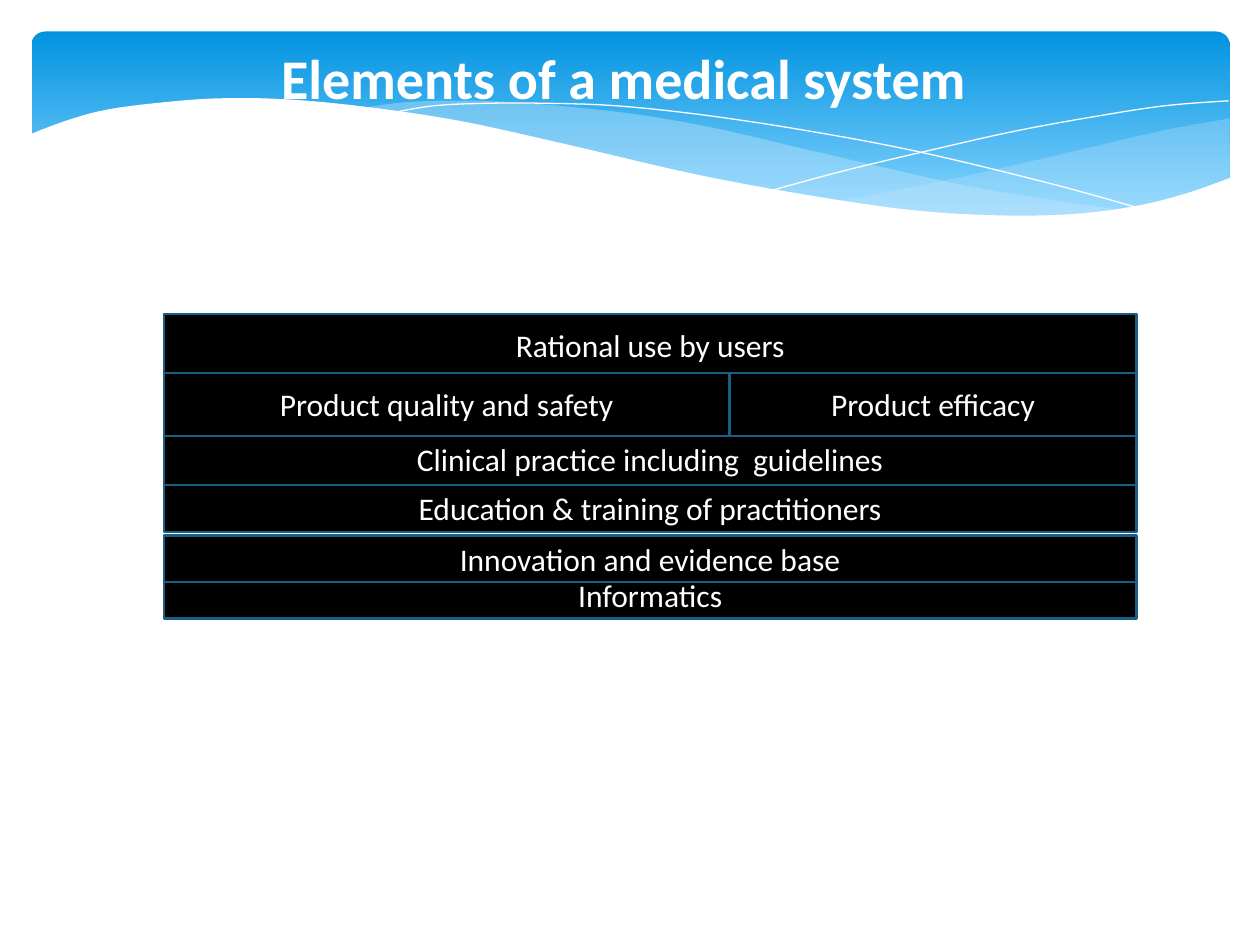
from lxml import etree
from pptx import Presentation
from pptx.dml.color import RGBColor
from pptx.enum import shapes, text
from pptx.oxml import ns
from pptx.util import Inches, Pt

WHITE = RGBColor(0xFF, 0xFF, 0xFF)
BLACK = RGBColor(0x00, 0x00, 0x00)
BORDER = RGBColor(0x19, 0x5F, 0x84)
SKY = RGBColor(0x02, 0x93, 0xE0)
PALE_SKY = RGBColor(0x83, 0xD3, 0xFE)
MIST = RGBColor(0xC6, 0xE7, 0xFC)

TITLE = "Elements of a medical system"
FONT = "Calibri"

# Label, left, top, width, height
LEFT, FULL, SPLIT = 1.3, 7.72, 4.49
ELEMENTS = [
    ("Rational use by users", LEFT, 2.49, FULL, 0.5),
    ("Informatics", LEFT, 4.54, FULL, 0.37),
    ("Education & training of practitioners", LEFT, 3.85, FULL, 0.37),
    ("Innovation and evidence base", LEFT, 4.25, FULL, 0.37),
    ("Clinical practice including  guidelines", LEFT, 3.44, FULL, 0.41),
    ("Product quality and safety", LEFT, 2.96, SPLIT, 0.5),
    ("Product efficacy", LEFT + SPLIT, 2.96, FULL - SPLIT, 0.5),
]

# Each wave is a list of edges; each edge is a smooth curve through its points
WAVES = [
    {"fill": MIST, "opacity": 29, "edges": [
        [(9.76, 0.94), (9.21, 1.04), (8.61, 1.18), (7.79, 1.37), (7.06, 1.52), (6.61, 1.6)],
        [(6.61, 1.6), (7.19, 1.67), (7.69, 1.71), (8.24, 1.72), (8.72, 1.69),
         (9.21, 1.6), (9.49, 1.52), (9.76, 1.41)],
    ]},
    {"fill": MIST, "opacity": 40, "edges": [
        [(8.93, 1.67), (8.37, 1.59), (7.75, 1.49), (7.06, 1.34), (6.29, 1.16), (5.69, 1.02),
         (5.14, 0.92), (4.65, 0.86), (4.2, 0.82), (3.8, 0.8), (3.44, 0.8), (3.13, 0.82),
         (2.86, 0.86)],
        [(2.86, 0.86), (3.42, 0.94), (4.04, 1.06), (4.49, 1.16), (5.3, 1.35), (6.01, 1.5),
         (6.65, 1.61), (7.22, 1.68), (7.73, 1.72), (8.18, 1.73), (8.57, 1.71), (8.93, 1.67)],
    ]},
    {"line": WHITE, "edges": [
        [(3.09, 0.9), (3.44, 0.84), (3.87, 0.82), (4.33, 0.82), (4.89, 0.84), (5.56, 0.91),
         (6.36, 1.03), (7.27, 1.2), (8.31, 1.45), (9.07, 1.66)],
    ]},
    {"line": WHITE, "edges": [
        [(6.13, 1.51), (6.72, 1.35), (7.48, 1.17), (8.06, 1.04), (8.66, 0.93), (9.24, 0.84),
         (9.75, 0.8)],
    ]},
    {"fill": WHITE, "opacity": 100, "edges": [
        [(9.77, 1.41), (9.4, 1.54), (8.99, 1.64), (8.5, 1.7), (7.93, 1.71), (7.26, 1.67),
         (6.48, 1.56), (5.55, 1.39), (4.47, 1.14), (3.65, 0.96), (2.92, 0.85), (2.3, 0.79),
         (1.77, 0.78), (1.32, 0.81), (0.85, 0.87), (0.52, 0.96), (0.23, 1.07)],
        [(0.23, 2.24), (9.77, 2.24)],
    ]},
]


def smooth(points, steps=5):
    """Return points along a Catmull-Rom curve through the given points."""
    padded = [points[0], *points, points[-1]]
    curve = [points[0]]
    for a, b, c, d in zip(padded, padded[1:], padded[2:], padded[3:]):
        for step in range(1, steps + 1):
            t = step / steps
            curve.append(tuple(
                (2 * q + (r - p) * t + (2 * p - 5 * q + 4 * r - s) * t ** 2
                 + (3 * q - p - 3 * r + s) * t ** 3) / 2
                for p, q, r, s in zip(a, b, c, d)))
    return curve


def add_wave(slide, wave):
    points = [(Inches(x), Inches(y)) for edge in wave["edges"] for x, y in smooth(edge)]
    builder = slide.shapes.build_freeform(*points[0])
    builder.add_line_segments(points[1:], close="fill" in wave)
    shape = builder.convert_to_shape()
    shape.shadow.inherit = False
    if "fill" in wave:
        shape.fill.solid()
        shape.fill.fore_color.rgb = wave["fill"]
        shape.line.fill.background()
        color = shape._element.spPr.find(ns.qn("a:solidFill"))[0]
        etree.SubElement(color, ns.qn("a:alpha"), val=str(wave["opacity"] * 1000))
    else:
        shape.fill.background()
        shape.line.color.rgb = wave["line"]
        shape.line.width = Pt(0)


def add_banner(slide):
    banner = slide.shapes.add_shape(
        shapes.MSO_SHAPE.ROUNDED_RECTANGLE, *map(Inches, (0.25, 0.25, 9.51, 1.56)))
    banner.adjustments[0] = 0.07
    banner.shadow.inherit = False
    banner.line.fill.background()
    banner.fill.gradient()
    banner.fill.gradient_angle = 270
    for stop, position, color in zip(banner.fill.gradient_stops, (0, 0.9), (SKY, PALE_SKY)):
        stop.position = position
        stop.color.rgb = color


def write(frame, words, size, bold=False):
    frame.text = words
    frame.vertical_anchor = text.MSO_ANCHOR.MIDDLE
    paragraph = frame.paragraphs[0]
    paragraph.alignment = text.PP_ALIGN.CENTER
    font = paragraph.runs[0].font
    for name, value in {"name": FONT, "size": Pt(size), "bold": bold}.items():
        setattr(font, name, value)
    font.color.rgb = WHITE


def add_element(slide, label, *box):
    block = slide.shapes.add_shape(shapes.MSO_SHAPE.RECTANGLE, *map(Inches, box))
    block.shadow.inherit = False
    block.fill.solid()
    block.fill.fore_color.rgb = BLACK
    block.line.color.rgb = BORDER
    block.line.width = Pt(1.25)
    write(block.text_frame, label, 18)


def place_title(slide):
    """Fill the title placeholder and bring it in front of the banner."""
    title = slide.shapes.title
    title.left, title.top, title.width, title.height = map(Inches, (2.02, 0.29, 5.86, 0.64))
    write(title.text_frame, TITLE, 32, bold=True)
    title.text_frame.word_wrap = False
    title.text_frame.auto_size = text.MSO_AUTO_SIZE.SHAPE_TO_FIT_TEXT
    slide.shapes._spTree.append(title._element)


def main():
    deck = Presentation()
    deck.slide_width, deck.slide_height = Inches(10), Inches(7.5)
    slide = deck.slides.add_slide(deck.slide_layouts[5])
    add_banner(slide)
    for wave in WAVES:
        add_wave(slide, wave)
    for element in ELEMENTS:
        add_element(slide, *element)
    place_title(slide)
    deck.save("out.pptx")


if __name__ == "__main__":
    main()
